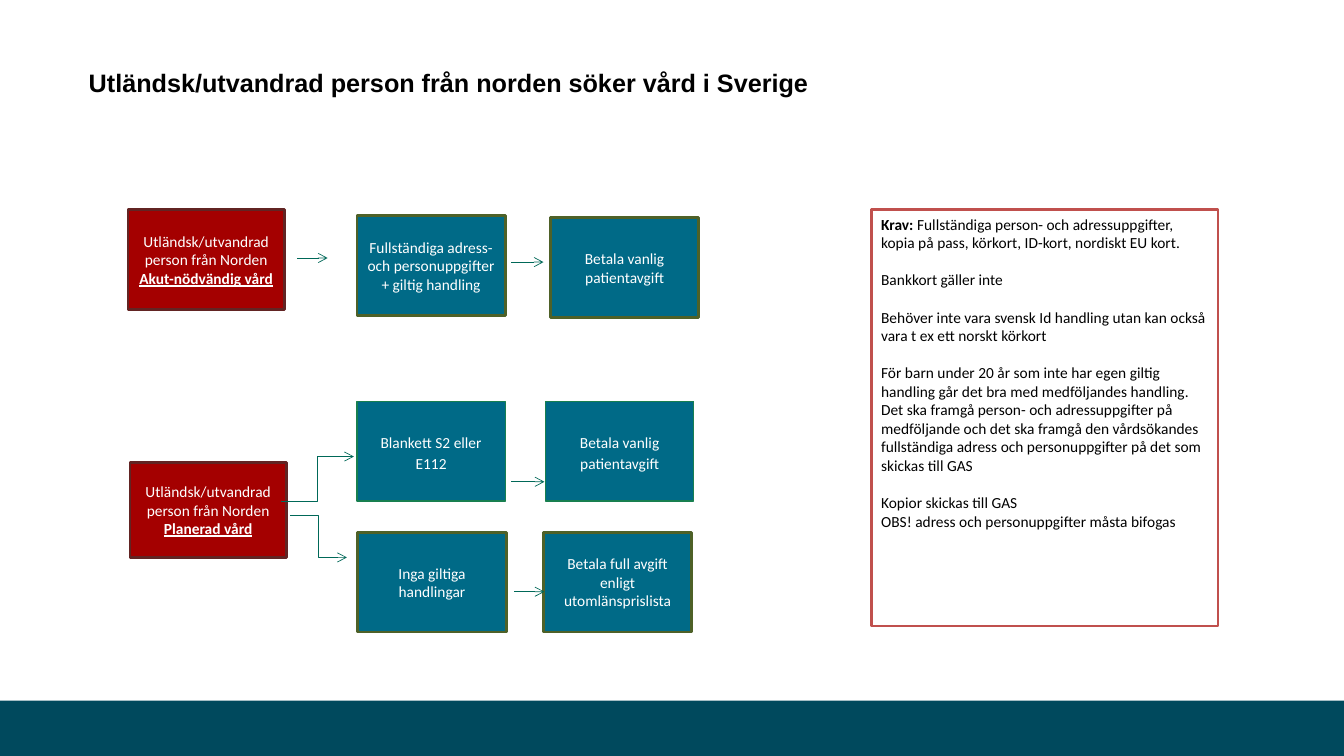
from lxml.etree import SubElement
from pptx import Presentation
from pptx.dml.color import RGBColor
from pptx.enum.shapes import MSO_CONNECTOR, MSO_SHAPE
from pptx.enum.text import MSO_ANCHOR, PP_ALIGN
from pptx.oxml.ns import qn
from pptx.util import Inches, Pt

COLORS = {
    "footer": "00495D", "start": "A40000", "start_edge": "622423",
    "step": "006A87", "step_edge": "4E6128", "plain_edge": "187F50",
    "arrow": "006858", "note_edge": "C0504D", "white": "FFFFFF", "black": "000000",
}
STEP_W, STEP_H = 11.03, 13.2
START_W = 11.63
BLANK_LINE = 13.4


def rgb(name):
    return RGBColor.from_string(COLORS[name])


class Flowchart:
    """Draws on one slide; all lengths are percentages of its width and height."""

    def __init__(self, prs):
        self.prs = prs
        self.s = prs.slides.add_slide(prs.slide_layouts[6])

    def x(self, share):
        return round(self.prs.slide_width * share / 100)

    def y(self, share):
        return round(self.prs.slide_height * share / 100)

    def place(self, left, top, width, height):
        return self.x(left), self.y(top), self.x(width), self.y(height)

    def add_runs(self, p, runs, color, size=11, font="Calibri"):
        """Fill a paragraph from (text, marks) pairs; marks hold b and u."""
        for text, marks in runs:
            r = p.add_run()
            r.text = text
            r.font.name, r.font.size = font, Pt(size)
            r.font.bold, r.font.underline = "b" in marks, "u" in marks
            r.font.color.rgb = rgb(color)

    def title(self, text, *box):
        tf = self.s.shapes.add_textbox(*self.place(*box)).text_frame
        tf.word_wrap = True
        tf.vertical_anchor = MSO_ANCHOR.MIDDLE
        tf.margin_left = tf.margin_right = tf.margin_top = tf.margin_bottom = 0
        p = tf.paragraphs[0]
        p.line_spacing = 0.9
        self.add_runs(p, [(text, "b")], "black", 18, "Arial")

    def rect(self, box, fill, edge=None, weight=2):
        sp = self.s.shapes.add_shape(MSO_SHAPE.RECTANGLE, *self.place(*box))
        sp.shadow.inherit = False
        sp.fill.solid()
        sp.fill.fore_color.rgb = rgb(fill)
        if edge:
            sp.line.color.rgb = rgb(edge)
            sp.line.width = Pt(weight)
        else:
            sp.line.fill.background()
        sp.text_frame.word_wrap = True
        return sp

    def box(self, box, paragraphs, fill, edge, weight=2):
        tf = self.rect(box, fill, edge, weight).text_frame
        tf.vertical_anchor = MSO_ANCHOR.MIDDLE
        for i, run in enumerate(paragraphs):
            p = tf.add_paragraph() if i else tf.paragraphs[0]
            p.alignment = PP_ALIGN.CENTER
            self.add_runs(p, [run], "white")
        return tf

    def start(self, left, top, height, care):
        self.box((left, top, START_W, height),
                 [("Utländsk/utvandrad person från Norden", ""), (care, "bu")],
                 "start", "start_edge")

    def step(self, left, top, text):
        self.box((left, top, STEP_W, STEP_H), [(text, "")], "step", "step_edge")

    def plain_step(self, left, top, text):
        """A step with a thin green edge and looser lines."""
        tf = self.box((left, top, STEP_W, STEP_H), [(text, "")],
                      "step", "plain_edge", 1)
        p = tf.paragraphs[0]
        p.line_spacing, p.space_after = 1.15, Pt(10)

    def note(self, box, paragraphs):
        tf = self.rect(box, "white", "note_edge").text_frame
        tf.vertical_anchor = MSO_ANCHOR.TOP
        for i, (runs, gap) in enumerate(paragraphs):
            p = tf.add_paragraph() if i else tf.paragraphs[0]
            p.alignment = PP_ALIGN.LEFT
            p.space_after = Pt(gap)
            self.add_runs(p, runs, "black")

    def arrow(self, x1, y1, x2, y2):
        """Straight when level, otherwise bent."""
        kind = MSO_CONNECTOR.STRAIGHT if y1 == y2 else MSO_CONNECTOR.ELBOW
        c = self.s.shapes.add_connector(
            kind, self.x(x1), self.y(y1), self.x(x2), self.y(y2))
        c.line.color.rgb = rgb("arrow")
        c.line.width = Pt(0.5)
        sp_pr = c._element.spPr
        SubElement(sp_pr.find(qn("a:ln")), qn("a:tailEnd"), type="arrow")
        SubElement(sp_pr, qn("a:effectLst"))


def main():
    prs = Presentation()
    prs.slide_width, prs.slide_height = Inches(13.33), Inches(7.5)
    chart = Flowchart(prs)

    chart.rect((0, 92.67, 100, 7.33), "footer")
    chart.title("Utländsk/utvandrad person från norden söker vård i Sverige",
                6.6, 4.8, 86.87, 12.8)

    chart.start(9.53, 27.73, 13.2, "Akut-nödvändig vård")
    chart.start(9.68, 61.2, 12.53, "Planerad vård")

    for step in (
        (26.56, 28.53, "Fullständiga adress- och personuppgifter + giltig handling"),
        (40.96, 28.8, "Betala vanlig patientavgift"),
        (26.63, 70.4, "Inga giltiga handlingar"),
        (40.44, 70.4, "Betala full avgift enligt utomlänsprislista"),
    ):
        chart.step(*step)

    for ends in (
        (22.13, 34.13, 24.38, 34.13),
        (38.03, 34.67, 40.44, 34.67),
        (20.93, 66.27, 26.33, 60.4),
        (21.61, 68.13, 25.81, 73.73),
        (38.03, 63.73, 40.51, 63.73),
        (38.26, 78.27, 40.51, 78.27),
    ):
        chart.arrow(*ends)

    chart.note((64.82, 27.73, 25.81, 55.07), [
        ([("Krav: ", "b"),
          ("Fullständiga person- och adressuppgifter, kopia på pass, "
           "körkort, ID-kort, nordiskt EU kort.", "")], BLANK_LINE),
        ([("Bankkort gäller inte", "")], BLANK_LINE),
        ([("Behöver inte vara svensk Id handling utan kan också "
           "vara t ex ett norskt körkort", "")], BLANK_LINE),
        ([("För barn under 20 år som inte har egen giltig handling går det bra "
           "med medföljandes handling. Det ska framgå person- och "
           "adressuppgifter på medföljande och det ska framgå den "
           "vårdsökandes fullständiga adress och personuppgifter på det som "
           "skickas till GAS", "")], BLANK_LINE),
        ([("Kopior skickas till GAS", "")], 0),
        ([("OBS! adress och personuppgifter måsta bifogas", "")], 0),
    ])

    chart.plain_step(26.56, 53.07, "Blankett S2 eller E112")
    chart.plain_step(40.59, 53.07, "Betala vanlig patientavgift")
    prs.save("out.pptx")


if __name__ == "__main__":
    main()
